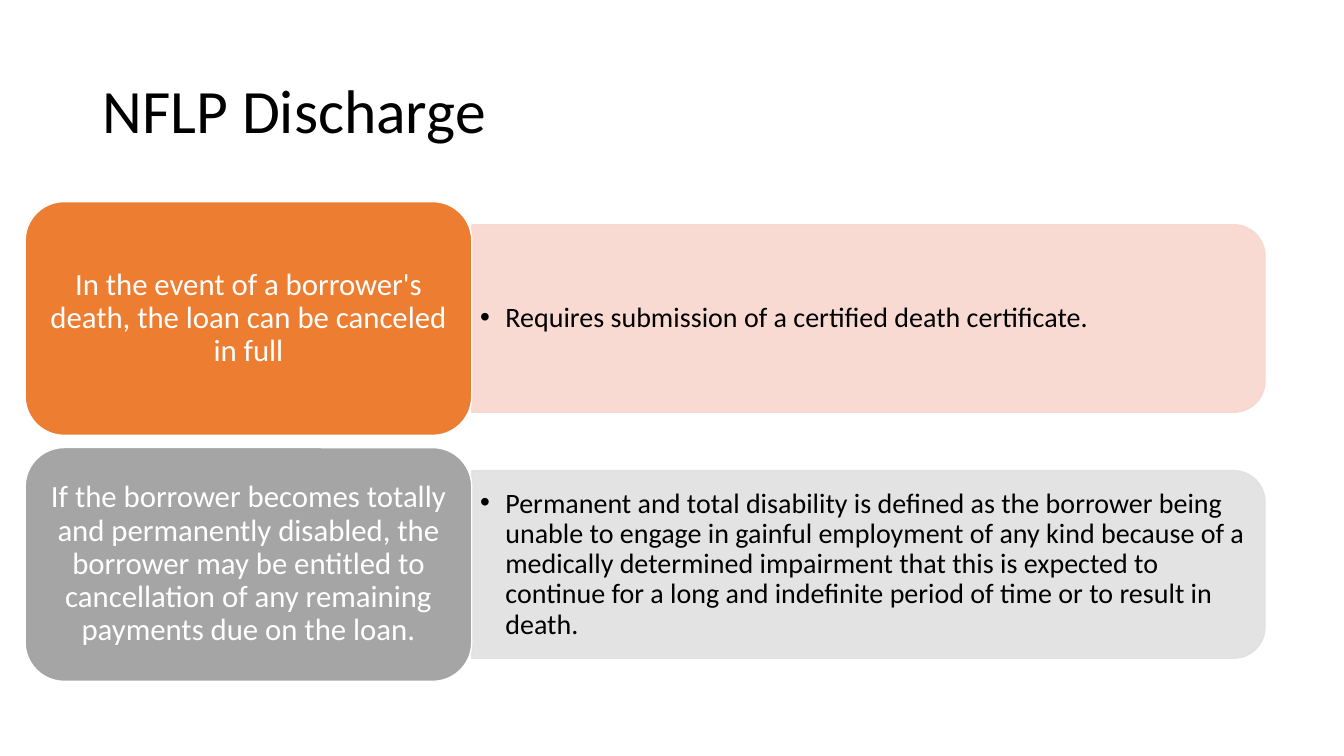
from dataclasses import dataclass

from lxml import etree
from pptx import Presentation
from pptx.dml.color import RGBColor
from pptx.enum.shapes import MSO_SHAPE
from pptx.enum.text import MSO_ANCHOR, MSO_AUTO_SIZE, PP_ALIGN
from pptx.oxml.ns import qn
from pptx.util import Pt

ROUND_RECT = MSO_SHAPE.ROUNDED_RECTANGLE
ROUND_TOP = MSO_SHAPE.ROUND_2_SAME_RECTANGLE
MIDDLE = MSO_ANCHOR.MIDDLE
NO_AUTOFIT = MSO_AUTO_SIZE.NONE
LEFT = PP_ALIGN.LEFT
CENTER = PP_ALIGN.CENTER

BLACK = RGBColor(0x00, 0x00, 0x00)
WHITE = RGBColor(0xFF, 0xFF, 0xFF)
ORANGE = RGBColor(0xED, 0x7D, 0x31)
PEACH = RGBColor(0xF8, 0xD7, 0xCE)
GRAY = RGBColor(0xA5, 0xA5, 0xA5)
PALE_GRAY = RGBColor(0xE1, 0xE1, 0xE1)

FONT = "Calibri"
LABEL_LEFT, LABEL_W, LABEL_H = 18, 319, 167
FIRST_TOP, ROW_PITCH = 144, 175.7
PANEL_LEFT, PANEL_W, PANEL_H = LABEL_LEFT + LABEL_W, 566.6, 134
DETAIL_W, DETAIL_H = 560, 120.2
BULLET_INDENT = 18


@dataclass
class DischargeCase:
    label: str
    detail: str
    label_color: RGBColor
    panel_color: RGBColor


CASES = [
    DischargeCase(
        "In the event of a borrower's death, the loan can be canceled in full",
        "Requires submission of a certified death certificate.",
        ORANGE, PEACH),
    DischargeCase(
        "If the borrower becomes totally and permanently disabled, the borrower "
        "may be entitled to cancellation of any remaining payments due on the loan.",
        "Permanent and total disability is defined as the borrower being unable "
        "to engage in gainful employment of any kind because of a medically "
        "determined impairment that this is expected to continue for a long and "
        "indefinite period of time or to result in death.",
        GRAY, PALE_GRAY),
]


def write(sp, text: str, *, size: float, color: RGBColor, align=LEFT,
          inset_x: float = 7.2, inset_y: float = 3.6, bullet: bool = False) -> None:
    tf = sp.text_frame
    tf.word_wrap = True
    tf.auto_size = NO_AUTOFIT
    tf.vertical_anchor = MIDDLE
    tf.margin_left = tf.margin_right = Pt(inset_x)
    tf.margin_top = tf.margin_bottom = Pt(inset_y)
    p = tf.paragraphs[0]
    p.alignment = align
    p.line_spacing = 0.9
    if bullet:
        pPr = p._p.get_or_add_pPr()
        pPr.set("marL", str(Pt(BULLET_INDENT)))
        pPr.set("indent", str(-Pt(BULLET_INDENT)))
        etree.SubElement(pPr, qn("a:buFont"), typeface="Arial")
        etree.SubElement(pPr, qn("a:buChar"), char="•")
    r = p.add_run()
    r.text = text
    r.font.name = FONT
    r.font.size = Pt(size)
    r.font.color.rgb = color


def add_box(s, kind, left: float, top: float, width: float, height: float,
            fill: RGBColor, line: RGBColor):
    sp = s.shapes.add_shape(kind, Pt(left), Pt(top), Pt(width), Pt(height))
    sp.shadow.inherit = False
    sp.fill.solid()
    sp.fill.fore_color.rgb = fill
    sp.line.color.rgb = line
    sp.line.width = Pt(1)
    return sp


def add_panel(s, center_y: float, color: RGBColor) -> None:
    center_x = PANEL_LEFT + PANEL_W / 2
    sp = add_box(s, ROUND_TOP, center_x - PANEL_H / 2, center_y - PANEL_W / 2,
                 PANEL_H, PANEL_W, color, color)
    sp.rotation = 90
    for clr in sp._element.spPr.iter(qn("a:srgbClr")):
        etree.SubElement(clr, qn("a:alpha"), val="90000")


def add_case(s, case: DischargeCase, top: float) -> None:
    center_y = top + LABEL_H / 2
    add_panel(s, center_y, case.panel_color)
    detail = s.shapes.add_textbox(Pt(PANEL_LEFT), Pt(center_y - DETAIL_H / 2),
                                  Pt(DETAIL_W), Pt(DETAIL_H))
    write(detail, case.detail, size=20, color=BLACK,
          inset_x=6, inset_y=3, bullet=True)
    label = add_box(s, ROUND_RECT, LABEL_LEFT, top, LABEL_W, LABEL_H,
                    case.label_color, WHITE)
    write(label, case.label, size=22, color=WHITE, align=CENTER,
          inset_x=6.6, inset_y=3.3)


def main() -> None:
    prs = Presentation()
    prs.slide_width, prs.slide_height = Pt(960), Pt(540)
    s = prs.slides.add_slide(prs.slide_layouts[5])
    title = s.shapes.title
    title.left, title.top = Pt(66), Pt(28.8)
    title.width, title.height = Pt(828), Pt(104.4)
    write(title, "NFLP Discharge", size=44, color=BLACK)
    for i, case in enumerate(CASES):
        add_case(s, case, FIRST_TOP + i * ROW_PITCH)
    prs.save("out.pptx")


if __name__ == "__main__":
    main()
